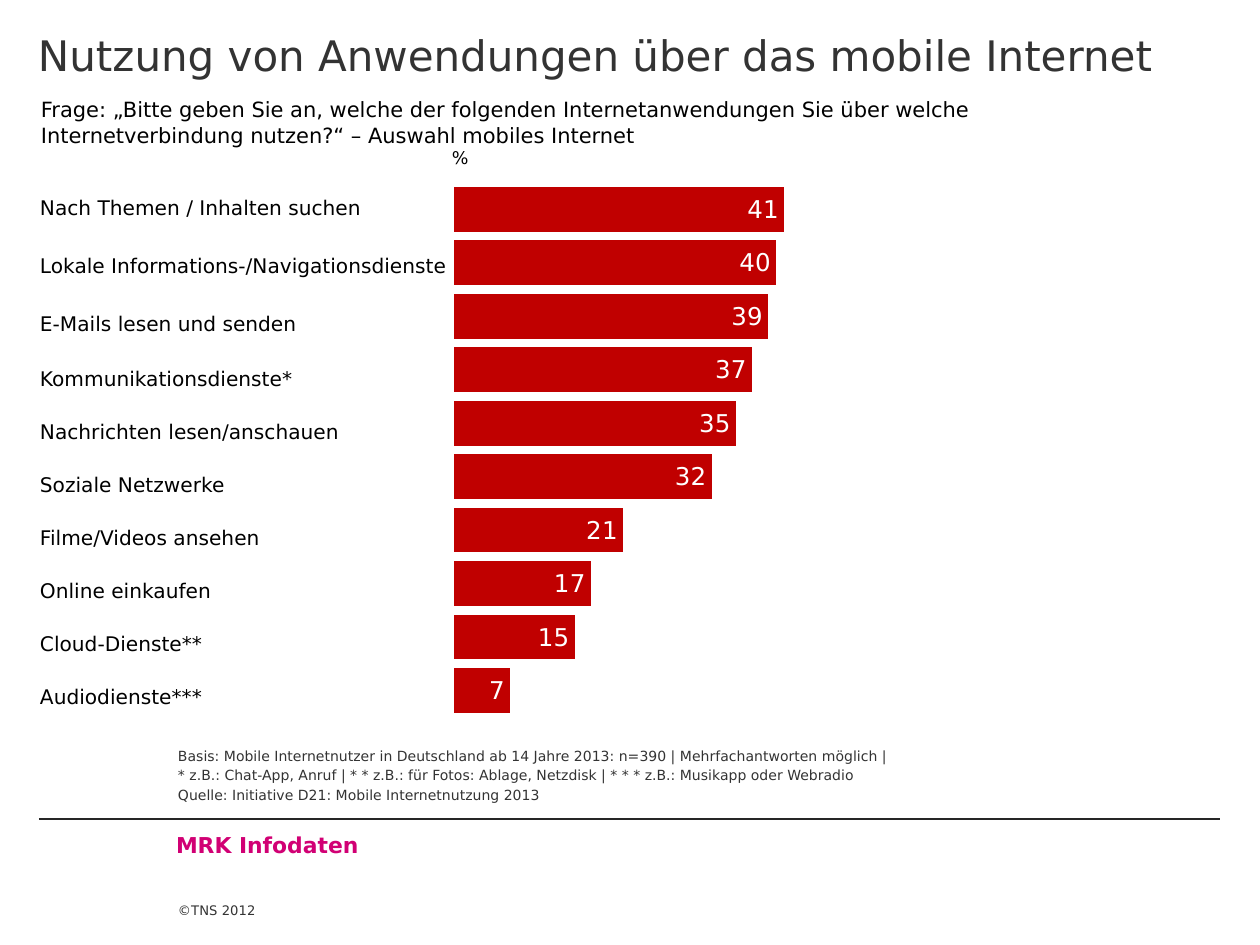
from lxml import etree
from pptx import Presentation
from pptx.chart.data import CategoryChartData
from pptx.dml.color import RGBColor
from pptx.enum.chart import XL_CHART_TYPE, XL_LABEL_POSITION
from pptx.enum.shapes import MSO_CONNECTOR
from pptx.enum.text import MSO_ANCHOR
from pptx.oxml.ns import qn
from pptx.util import Emu, Pt

BAR = XL_CHART_TYPE.BAR_CLUSTERED
INSIDE_END = XL_LABEL_POSITION.INSIDE_END
STRAIGHT = MSO_CONNECTOR.STRAIGHT
TOP, MIDDLE, BOTTOM = MSO_ANCHOR.TOP, MSO_ANCHOR.MIDDLE, MSO_ANCHOR.BOTTOM

EMU_PER_PX = 914400 / 126
FONT = "DejaVu Sans"
BLACK = RGBColor(0x00, 0x00, 0x00)
WHITE = RGBColor(0xFF, 0xFF, 0xFF)
GREY = RGBColor(0x33, 0x33, 0x33)
RULE = RGBColor(0x26, 0x26, 0x26)
RED = RGBColor(0xC0, 0x00, 0x00)
MAGENTA = RGBColor(0xD1, 0x00, 0x74)

USES = [
    ("Nach Themen / Inhalten suchen", 41),
    ("Lokale Informations-/Navigationsdienste", 40),
    ("E-Mails lesen und senden", 39),
    ("Kommunikationsdienste*", 37),
    ("Nachrichten lesen/anschauen", 35),
    ("Soziale Netzwerke", 32),
    ("Filme/Videos ansehen", 21),
    ("Online einkaufen", 17),
    ("Cloud-Dienste**", 15),
    ("Audiodienste***", 7),
]
TALL_ROWS = 3
NOTES = [
    "Basis: Mobile Internetnutzer in Deutschland ab 14 Jahre 2013: n=390 | Mehrfachantworten möglich |",
    "* z.B.: Chat-App, Anruf | * * z.B.: für Fotos: Ablage, Netzdisk | * * * z.B.: Musikapp oder Webradio",
    "Quelle: Initiative D21: Mobile Internetnutzung 2013",
]


def px(length):
    """Turn pixels into EMU."""
    return Emu(round(length * EMU_PER_PX))


def style_font(font, size, color, bold=False):
    """Set the typeface, size, colour and weight of a font."""
    font.name = FONT
    font.size = Pt(size)
    font.bold = bold
    font.color.rgb = color


def add_span(para, text, size, color, bold=False):
    """Append one styled run to a paragraph."""
    span = para.add_run()
    span.text = text
    style_font(span.font, size, color, bold)


def add_text(page, box, lines, size, color, insets=(0, 0, 0, 0), anchor=TOP, bold=False):
    """Place a wrapped text box with one paragraph per line."""
    frame = page.shapes.add_textbox(*map(px, box)).text_frame
    frame.word_wrap = True
    frame.vertical_anchor = anchor
    frame.margin_left, frame.margin_top, frame.margin_right, frame.margin_bottom = map(px, insets)
    for index, line in enumerate(lines):
        para = frame.add_paragraph() if index else frame.paragraphs[0]
        if index:
            para.space_before = Pt(size * 0.2)
        add_span(para, line, size, color, bold)


def add_heading(page, left, top, width):
    """Place the title and the survey question below it."""
    add_text(page, (left, top, width, 142),
             ["Nutzung von Anwendungen über das mobile Internet"], 24, GREY, (38, 29, 38, 0))
    add_text(page, (left + 28, top + 91, width - 113, 63),
             ["Frage: „Bitte geben Sie an, welche der folgenden Internetanwendungen "
              "Sie über welche Internetverbindung nutzen?“ – Auswahl mobiles Internet"],
             12, BLACK, (13, 6, 13, 6))


def set_plot_layout(chart, **fractions):
    """Fix the inner plot area as fractions of the chart."""
    plot_area = chart._chartSpace.chart.plotArea
    for old in plot_area.findall(qn("c:layout")):
        plot_area.remove(old)
    layout = etree.Element(qn("c:layout"))
    manual = etree.SubElement(layout, qn("c:manualLayout"))
    settings = {"layoutTarget": "inner", "xMode": "edge", "yMode": "edge", **fractions}
    for name, value in settings.items():
        etree.SubElement(manual, qn(f"c:{name}")).set("val", str(value))
    plot_area.insert(0, layout)


def add_bars(page, left, top, width, height):
    """Place the bar chart and its unit sign."""
    data = CategoryChartData(number_format="#,##0")
    data.categories = [str(number) for number in range(1, len(USES) + 1)]
    data.add_series("Series 1", [share for _, share in USES])
    chart = page.shapes.add_chart(BAR, px(left), px(top), px(width), px(height), data).chart
    style_font(chart.font, 18, BLACK)
    chart.has_legend = False
    chart.has_title = False
    chart.category_axis.reverse_order = True
    chart.category_axis.visible = False
    scale = chart.value_axis
    scale.minimum_scale = 0
    scale.maximum_scale = 100
    scale.has_major_gridlines = False
    scale.visible = False
    set_plot_layout(chart, x=0.36, y=0.06, w=0.64, h=0.79)

    plot = chart.plots[0]
    plot.gap_width = 20
    plot.vary_by_categories = False
    series = plot.series[0]
    series.format.fill.solid()
    series.format.fill.fore_color.rgb = RED
    labels = series.data_labels
    labels.show_value = True
    labels.position = INSIDE_END
    labels.number_format = "#,##0"
    labels.number_format_is_linked = False
    style_font(labels.font, 14, WHITE)
    add_text(page, (left + 452, top + 5, 40, 22), ["%"], 10, BLACK, anchor=MIDDLE)


def clear_cell(cell):
    """Remove the borders and the fill of a table cell."""
    properties = cell._tc.get_or_add_tcPr()
    for side in ("lnL", "lnR", "lnT", "lnB"):
        border = etree.SubElement(properties, qn(f"a:{side}"))
        etree.SubElement(border, qn("a:noFill"))
    cell.fill.background()


def add_labels(page, left, top, width):
    """Place the table that names the bars."""
    heights = [58 if index < TALL_ROWS else 53 for index in range(len(USES))]
    table = page.shapes.add_table(len(USES), 1, px(left), px(top), px(width), px(sum(heights))).table
    table.first_row = False
    table.horz_banding = False
    for index, (name, _) in enumerate(USES):
        table.rows[index].height = px(heights[index])
        cell = table.cell(index, 0)
        clear_cell(cell)
        cell.vertical_anchor = MIDDLE
        cell.margin_left = cell.margin_right = cell.margin_top = px(1)
        cell.margin_bottom = 0
        para = cell.text_frame.paragraphs[0]
        if index >= TALL_ROWS:
            para.line_spacing = 0.9
            para.space_after = Pt(3)
        add_span(para, name, 11.5, BLACK)


def add_footer(page, left, top, width):
    """Place the notes, the rule, the institute name and the copyright line."""
    add_text(page, (left + 139, top - 52, width - 139, 51), NOTES, 8, GREY, (0, 0, 0, 15), BOTTOM)
    rule = page.shapes.add_connector(STRAIGHT, px(left), px(top), px(left + width), px(top))
    rule.line.color.rgb = RULE
    rule.line.width = Pt(0.75)
    etree.SubElement(rule._element.spPr, qn("a:effectLst"))
    add_text(page, (left + 69, top, 1041, 52), ["MRK Infodaten"], 12.5, MAGENTA,
             (68, 13, 13, 6), bold=True)
    add_text(page, (left + 139, top + 53, 104, 73), ["©TNS 2012"], 7.5, GREY, (0, 0, 0, 37), BOTTOM)


def main():
    """Build the slide and save the deck."""
    deck = Presentation()
    deck.slide_width, deck.slide_height = px(1260), px(945)
    page = deck.slides.add_slide(deck.slide_layouts[6])
    add_bars(page, 0, 142, 1260, 677)
    add_heading(page, 0, 0, 1260)
    add_labels(page, 39, 179, 495)
    add_footer(page, 39, 819, 1181)
    deck.save("out.pptx")


if __name__ == "__main__":
    main()
